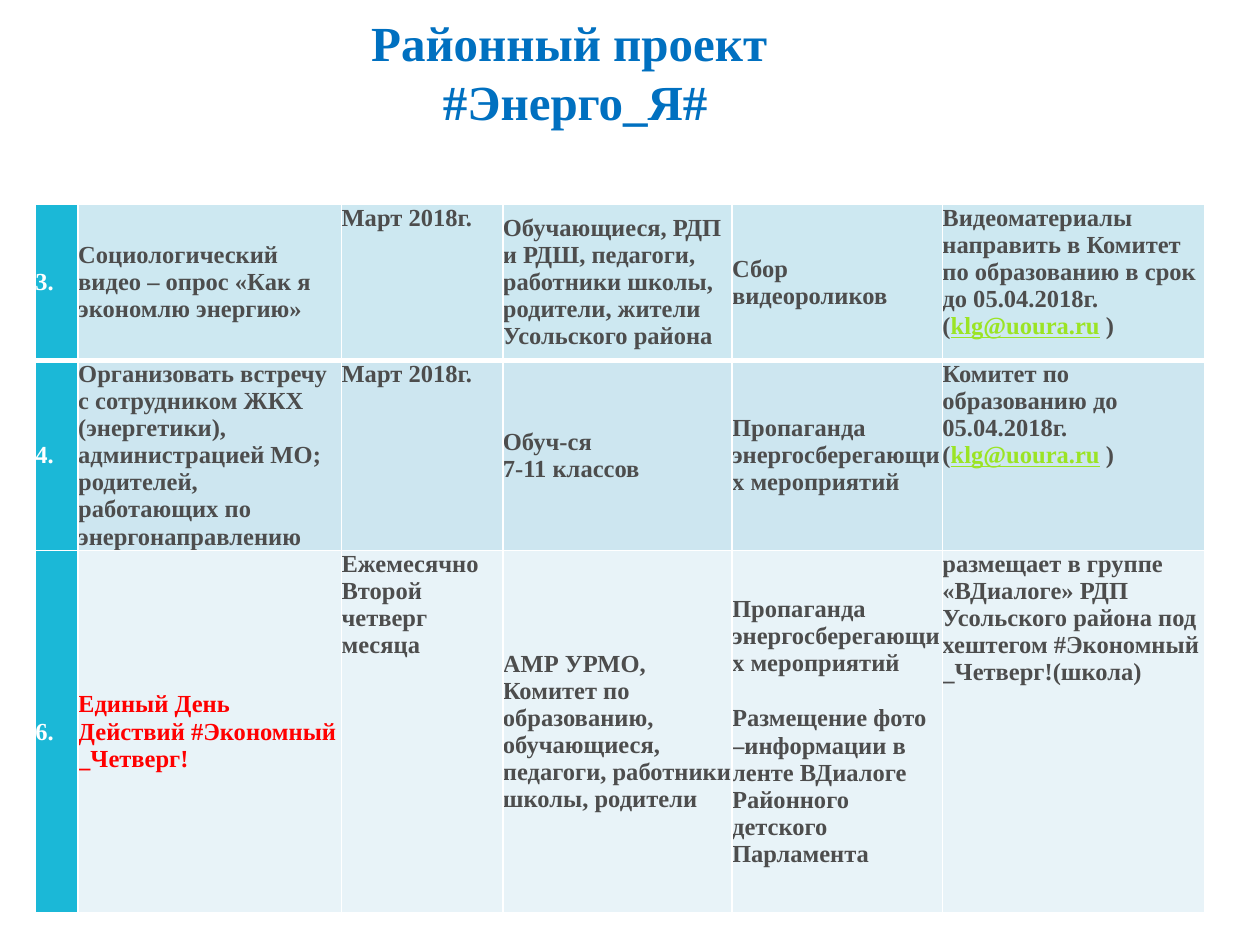
"""Build the slide with the district energy project table."""
from lxml import etree
from pptx import Presentation
from pptx.dml.color import RGBColor
from pptx.enum import text as t
from pptx.oxml import ns
from pptx.util import Pt

WHITE = RGBColor(0xFF, 0xFF, 0xFF)
BLUE = RGBColor(0x00, 0x70, 0xC0)
TEAL = RGBColor(0x1B, 0xB8, 0xD7)
GREY = RGBColor(0x4D, 0x4D, 0x4D)
RED = RGBColor(0xFF, 0x00, 0x00)
LIME = RGBColor(0x9B, 0xE4, 0x24)
FILLS = [RGBColor(0xCD, 0xE8, 0xF1), RGBColor(0xCD, 0xE6, 0xF0),
         RGBColor(0xE8, 0xF3, 0xF8)]

FACE = "Times New Roman"
MAIL = "klg@uoura.ru"
TITLE = ["Районный проект ", "#Энерго_Я#"]
ROWS = [
    [["3."],
     ["Социологический видео – опрос «Как я экономлю энергию»"],
     ["Март 2018г."],
     ["Обучающиеся, РДП и РДШ, педагоги, работники школы, родители, "
      "жители Усольского района"],
     ["Сбор видеороликов"],
     ["Видеоматериалы направить в Комитет по образованию в срок до "
      "05.04.2018г. (klg@uoura.ru )"]],
    [["4."],
     ["Организовать встречу с сотрудником ЖКХ (энергетики), администрацией "
      "МО; родителей, работающих по энергонаправлению"],
     ["Март 2018г."],
     ["Обуч-ся", "7-11 классов"],
     ["Пропаганда энергосберегающих мероприятий"],
     ["Комитет по образованию до 05.04.2018г. (klg@uoura.ru )"]],
    [["6."],
     ["Единый День Действий #Экономный _Четверг!"],
     ["Ежемесячно", "Второй четверг месяца"],
     ["АМР УРМО, Комитет по образованию, обучающиеся, педагоги, работники "
      "школы, родители"],
     ["Пропаганда энергосберегающих мероприятий",
      "Размещение фото –информации в ленте ВДиалоге Районного детского "
      "Парламента"],
     ["размещает в группе «ВДиалоге» РДП Усольского района под хештегом "
      "#Экономный _Четверг!(школа)"]],
]
WIDTHS = [24.5, 150.5, 92.2, 131, 120.2, 149.8]
HEIGHTS = [89.3, 98.6, 207.4]
TOP_COLS = {2, 5}
INKS = {(2, 1): RED}
GAPS = {(2, 4): 16}
SIDES = ["lnL", "lnR", "lnT", "lnB"]


def apply(obj, form):
    for key, val in form.items():
        setattr(obj, key, val)


def add_run(para, words, size, ink, line=None):
    run = para.add_run()
    run.text = words
    apply(run.font, dict(name=FACE, size=Pt(size), bold=True, underline=line))
    run.font.color.rgb = ink


def add_lines(frame, lines, size, ink, side, gap=0):
    for num, line in enumerate(lines):
        para = frame.add_paragraph() if num else frame.paragraphs[0]
        apply(para, dict(alignment=side, space_before=Pt(gap if num else 0)))
        head, mail, tail = line.partition(MAIL)
        add_run(para, head, size, ink)
        if mail:
            add_run(para, mail, size, LIME, True)
            add_run(para, tail, size, ink)


def add_edges(cell, row):
    props = cell._tc.get_or_add_tcPr()
    for pos, side in enumerate(SIDES):
        thick = (side, row) in {("lnB", 0), ("lnT", 1)}
        edge = etree.Element(ns.qn("a:" + side), w=str(Pt(3 if thick else 1)))
        fill = etree.SubElement(edge, ns.qn("a:solidFill"))
        etree.SubElement(fill, ns.qn("a:srgbClr"), val=str(WHITE))
        props.insert(pos, edge)


def add_grid(slide):
    grid = slide.shapes.add_table(
        len(ROWS), len(WIDTHS), Pt(20.2), Pt(116.8),
        Pt(sum(WIDTHS)), Pt(sum(HEIGHTS))).table
    apply(grid, dict(first_row=False, horz_banding=False))
    for col, width in zip(grid.columns, WIDTHS):
        col.width = Pt(width)
    for row, height in zip(grid.rows, HEIGHTS):
        row.height = Pt(height)
    for r, cells in enumerate(ROWS):
        for c, lines in enumerate(cells):
            cell = grid.cell(r, c)
            anchor = t.MSO_ANCHOR.TOP if c in TOP_COLS else t.MSO_ANCHOR.MIDDLE
            apply(cell, dict(margin_left=0, margin_right=0, margin_top=0,
                             margin_bottom=0, vertical_anchor=anchor))
            cell.fill.solid()
            cell.fill.fore_color.rgb = FILLS[r] if c else TEAL
            ink = INKS.get((r, c), GREY) if c else WHITE
            add_lines(cell.text_frame, lines, 14, ink, t.PP_ALIGN.LEFT,
                      GAPS.get((r, c), 0))
            add_edges(cell, r)


def main():
    deck = Presentation()
    apply(deck, dict(slide_width=Pt(720), slide_height=Pt(540)))
    slide = deck.slides.add_slide(deck.slide_layouts[5])
    title = slide.shapes.title
    apply(title, dict(left=Pt(31), top=Pt(3.6), width=Pt(595.4),
                      height=Pt(74.9)))
    apply(title.text_frame, dict(word_wrap=True,
                                 auto_size=t.MSO_AUTO_SIZE.NONE,
                                 vertical_anchor=t.MSO_ANCHOR.TOP))
    add_lines(title.text_frame, TITLE, 28, BLUE, t.PP_ALIGN.CENTER)
    add_grid(slide)
    deck.save("out.pptx")


if __name__ == "__main__":
    main()
